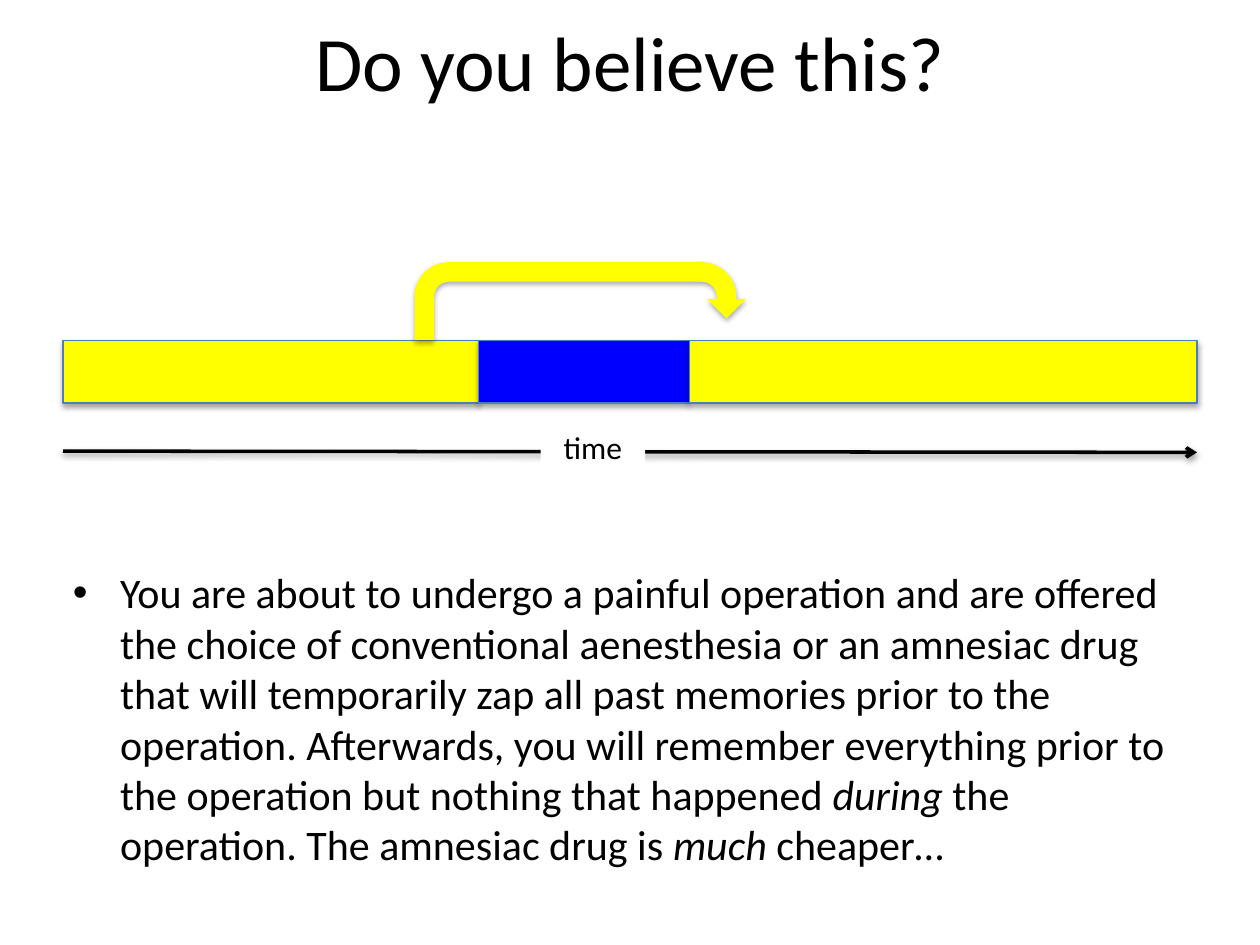
from dataclasses import dataclass

from lxml import etree
from pptx import Presentation
from pptx import util as u
from pptx.dml.color import RGBColor
from pptx.enum import shapes, text
from pptx.oxml import ns


@dataclass(frozen=True)
class Theme:
    font: str = "Calibri"
    ink: str = "000000"
    paper: str = "FFFFFF"
    memory: str = "FFFF00"
    operation: str = "0000FF"
    outline: str = "4B7EBC"
    title_size: int = 44
    body_size: int = 24
    label_size: int = 18


def apply(target, formats):
    for name, value in formats.items():
        setattr(target, name, value)


def box(*lengths):
    return [u.Pt(n) for n in lengths]


class SlideBuilder:
    """Draws themed elements on one slide, with lengths in points."""

    def __init__(self, s, theme):
        self.s = s
        self.theme = theme

    def fill(self, sp, color):
        sp.fill.solid()
        sp.fill.fore_color.rgb = RGBColor.from_string(color)

    def add_runs(self, p, runs, size, align):
        p.alignment = align
        for words, italic in runs:
            r = p.add_run()
            r.text = words
            apply(r.font, {"name": self.theme.font, "size": u.Pt(size), "italic": italic})
            r.font.color.rgb = RGBColor.from_string(self.theme.ink)

    def title(self, words, area):
        sp = self.s.shapes.title
        apply(sp, dict(zip(("left", "top", "width", "height"), box(*area))))
        tf = sp.text_frame
        tf.vertical_anchor = text.MSO_ANCHOR.MIDDLE
        self.add_runs(tf.paragraphs[0], [(words, False)], self.theme.title_size, text.PP_ALIGN.CENTER)

    def bullet(self, runs, area, indent):
        tf = self.s.shapes.add_textbox(*box(*area)).text_frame
        tf.word_wrap = True
        p = tf.paragraphs[0]
        self.add_runs(p, runs, self.theme.body_size, text.PP_ALIGN.LEFT)
        apply(p, {"space_before": u.Pt(4.8), "space_after": u.Pt(24)})
        pPr = p._p.get_or_add_pPr()
        pPr.set("marL", str(u.Pt(indent)))
        pPr.set("indent", str(-u.Pt(indent)))
        etree.SubElement(pPr, ns.qn("a:buFont")).set("typeface", "Arial")
        etree.SubElement(pPr, ns.qn("a:buChar")).set("char", "•")

    def bar(self, area, color):
        sp = self.s.shapes.add_shape(shapes.MSO_SHAPE.RECTANGLE, *box(*area))
        self.fill(sp, color)
        sp.line.color.rgb = RGBColor.from_string(self.theme.outline)
        sp.line.width = u.Pt(0.75)

    def uturn(self, area, color, adjustments):
        sp = self.s.shapes.add_shape(shapes.MSO_SHAPE.U_TURN_ARROW, *box(*area))
        self.fill(sp, color)
        sp.line.fill.background()
        for i, value in enumerate(adjustments):
            sp.adjustments[i] = value

    def arrow(self, begin, end):
        sp = self.s.shapes.add_connector(shapes.MSO_CONNECTOR.STRAIGHT, *box(*begin, *end))
        sp.line.color.rgb = RGBColor.from_string(self.theme.ink)
        sp.line.width = u.Pt(2)
        ln = sp.element.spPr.find(ns.qn("a:ln"))
        etree.SubElement(ln, ns.qn("a:tailEnd")).set("type", "arrow")

    def label(self, words, area):
        sp = self.s.shapes.add_textbox(*box(*area))
        self.fill(sp, self.theme.paper)
        tf = sp.text_frame
        apply(tf, {"word_wrap": True, "auto_size": text.MSO_AUTO_SIZE.SHAPE_TO_FIT_TEXT})
        self.add_runs(tf.paragraphs[0], [(words, False)], self.theme.label_size, text.PP_ALIGN.CENTER)


def main():
    prs = Presentation()
    apply(prs, {"slide_width": u.Pt(720), "slide_height": u.Pt(540)})
    theme = Theme()
    slide = SlideBuilder(prs.slides.add_slide(prs.slide_layouts[5]), theme)

    slide.title("Do you believe this?", (36, 0.72, 648, 68.4))
    slide.bullet(
        [
            ("You are about to undergo a painful operation and are offered the choice of "
             "conventional aenesthesia or an amnesiac drug that will temporarily zap all past "
             "memories prior to the operation. Afterwards, you will remember everything prior "
             "to the operation but nothing that happened ", False),
            ("during", True),
            (" the operation. The amnesiac drug is ", False),
            ("much", True),
            (" cheaper…", False),
        ],
        (34.56, 320.4, 648, 199.44),
        27,
    )

    left = 36
    for width, color in ((237.6, theme.memory), (120.6, theme.operation), (289.8, theme.memory)):
        slide.bar((left, 194.4, width, 36), color)
        left += width

    slide.uturn((236.9, 149.8, 189.4, 44.6), theme.memory, (0.25, 0.25, 0.25, 0.44, 0.72))
    slide.arrow((36, 257.8), (684, 258.5))
    slide.label("time", (308.9, 241.2, 59.8, 28.8))
    prs.save("out.pptx")


if __name__ == "__main__":
    main()
